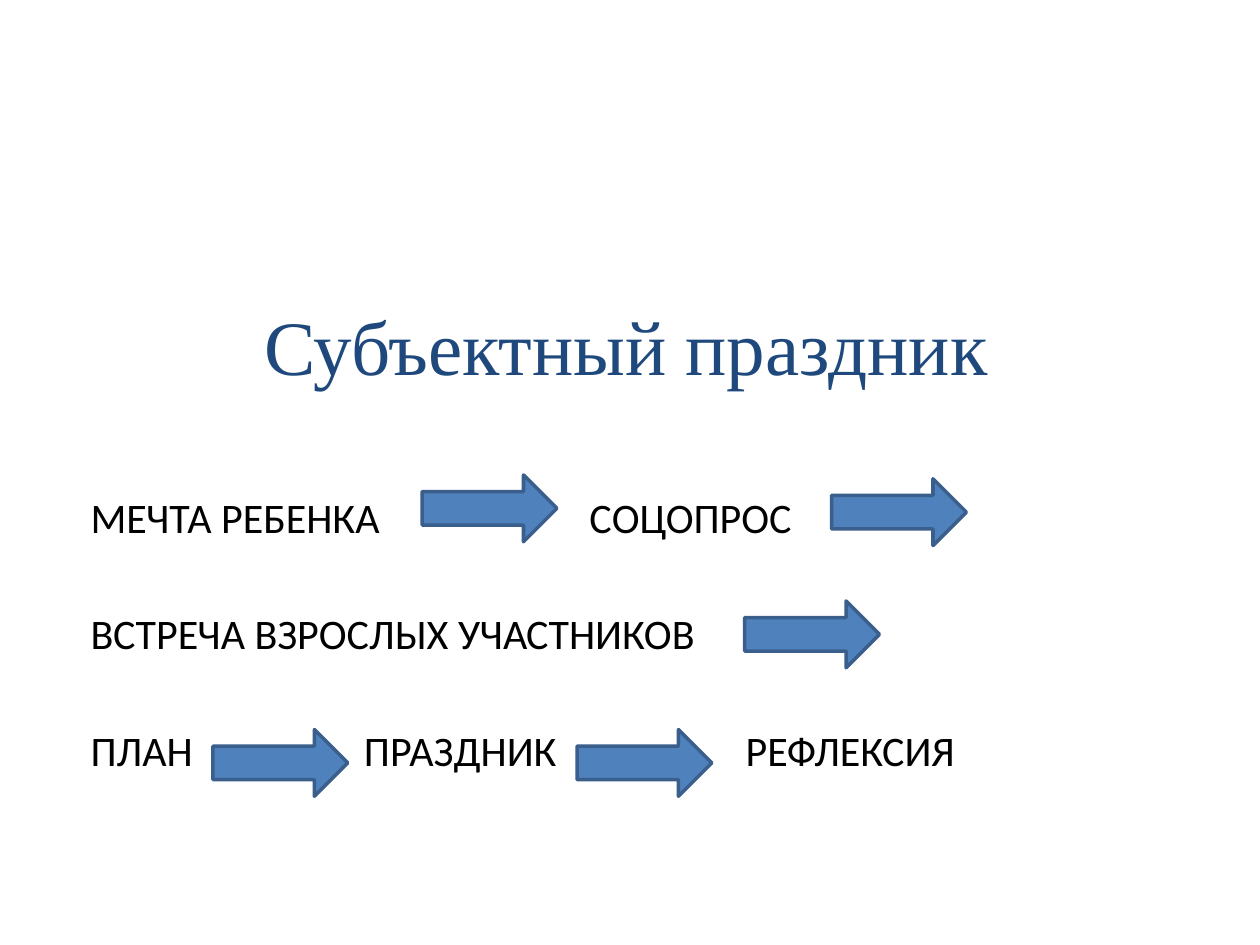
from lxml.etree import SubElement
from pptx import Presentation
from pptx.dml.color import RGBColor
from pptx.enum.shapes import MSO_SHAPE
from pptx.enum.text import MSO_ANCHOR, PP_ALIGN
from pptx.oxml.ns import qn
from pptx.util import Inches, Pt

COLORS = {"title": "1F497D", "text": "000000", "arrow": "4F81BD", "outline": "3A5F8C"}

# Each row: steps, tab stops and (left, top) of its arrows, relative to the flow box
ROWS = [
    (["МЕЧТА РЕБЕНКА", "СОЦОПРОС"], [3.96], [(2.73, -0.08), (5.98, -0.05)]),
    (["ВСТРЕЧА ВЗРОСЛЫХ УЧАСТНИКОВ"], [], [(5.29, 0.92)]),
    (["ПЛАН", "ПРАЗДНИК", "РЕФЛЕКСИЯ"], [2.17, 5.2], [(1.07, 1.94), (3.96, 1.94)]),
]


def color(name):
    return RGBColor.from_string(COLORS[name])


def style(p, font, size, name):
    for r in p.runs:
        r.font.name = font
        r.font.size = Pt(size)
        r.font.color.rgb = color(name)


def add_text_frame(s, left, top, width, height):
    box = s.shapes.add_textbox(Inches(left), Inches(top), Inches(width), Inches(height))
    tf = box.text_frame
    tf.word_wrap = True
    return tf


def add_title(s, left, top, width, height):
    tf = add_text_frame(s, left, top, width, height)
    tf.vertical_anchor = MSO_ANCHOR.MIDDLE
    p = tf.paragraphs[0]
    p.text = "Субъектный праздник"
    p.alignment = PP_ALIGN.CENTER
    style(p, "Times New Roman", 44, "title")


def add_tabs(p, stops):
    tabs = SubElement(p._p.get_or_add_pPr(), qn("a:tabLst"))
    for stop in stops:
        SubElement(tabs, qn("a:tab"), pos=str(Inches(stop)), algn="l")


def add_arrow(s, left, top):
    arrow = s.shapes.add_shape(
        MSO_SHAPE.RIGHT_ARROW, Inches(left), Inches(top), Inches(1.07), Inches(0.53))
    arrow.shadow.inherit = False
    arrow.fill.solid()
    arrow.fill.fore_color.rgb = color("arrow")
    arrow.line.color.rgb = color("outline")
    arrow.line.width = Pt(2)


def add_flow(s, left, top, width, height):
    tf = add_text_frame(s, left, top, width, height)
    for i, (steps, stops, arrows) in enumerate(ROWS):
        p = tf.add_paragraph() if i else tf.paragraphs[0]
        p.text = "\t".join(steps)
        if stops:
            add_tabs(p, stops)
        if i:
            p.space_before = Pt(37.7)
        style(p, "Calibri", 24, "text")
        for x, y in arrows:
            add_arrow(s, left + x, top + y)


def main():
    prs = Presentation()
    prs.slide_width, prs.slide_height = Inches(10), Inches(7.5)
    s = prs.slides.add_slide(prs.slide_layouts[6])
    add_title(s, 0.47, 2.19, 9, 1.09)
    add_flow(s, 0.62, 3.85, 8.92, 3.32)
    prs.save("out.pptx")


if __name__ == "__main__":
    main()
